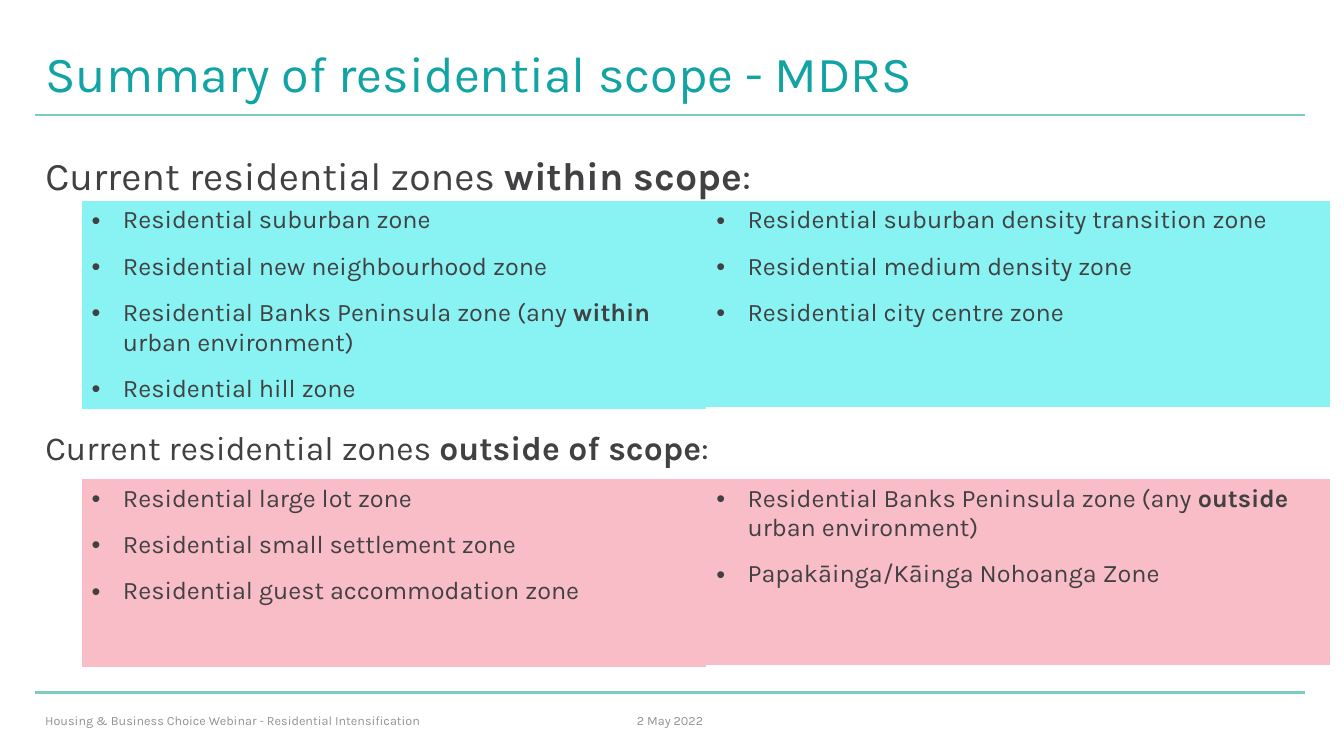
from dataclasses import dataclass

from lxml.etree import SubElement
from pptx import Presentation
from pptx.dml.color import RGBColor
from pptx.enum.shapes import MSO_CONNECTOR as Connector
from pptx.enum.text import MSO_ANCHOR as Anchor, MSO_AUTO_SIZE as AutoSize, PP_ALIGN as Align
from pptx.oxml.ns import qn
from pptx.util import Inches, Pt

FONT = "Karla"
COLORS = {
    "title": "12A4A4",
    "text": "414042",
    "footer": "939393",
    "rule": "7CCCBF",
    "within": "89F2F2",
    "outside": "F9BDC7",
    "border": "FFFFFF",
}
ZONE_INDENT = Inches(0.31)
RIGHT_CELL_BORDERS = {"R": 1, "T": 1, "B": 3}


@dataclass
class ZoneTable:
    top: float
    height: float
    fill: str
    columns: list[list[str]]


@dataclass
class FooterText:
    text: str
    left: float
    width: float
    align: Align


ZONE_TABLES = [
    ZoneTable(1.99, 2.07, "within", [
        [
            "Residential suburban zone",
            "Residential new neighbourhood zone",
            "Residential Banks Peninsula zone (any **within** urban environment)",
            "Residential hill zone",
        ],
        [
            "Residential suburban density transition zone",
            "Residential medium density zone",
            "Residential city centre zone",
        ],
    ]),
    ZoneTable(4.75, 1.87, "outside", [
        [
            "Residential large lot zone",
            "Residential small settlement zone",
            "Residential guest accommodation zone",
        ],
        [
            "Residential Banks Peninsula zone (any **outside** urban environment)",
            "Papakāinga/Kāinga Nohoanga Zone",
        ],
    ]),
]
FOOTER_TEXTS = [
    FooterText("Housing & Business Choice Webinar - Residential Intensification",
               0.35, 5.03, Align.LEFT),
    FooterText("2 May 2022", 6.07, 1.15, Align.CENTER),
]


def rgb(name: str) -> RGBColor:
    return RGBColor.from_string(COLORS[name])


def write(paragraph, text: str, *, size: float, color: str = "text",
          align: Align = Align.LEFT, line: float = 1.0,
          before: float = 0, after: float = 0) -> None:
    """Fill a paragraph; text between double asterisks is bold."""
    paragraph.alignment = align
    paragraph.line_spacing = line
    paragraph.space_before, paragraph.space_after = Pt(before), Pt(after)
    for index, part in enumerate(text.split("**")):
        run = paragraph.add_run()
        run.text = part
        run.font.name, run.font.size = FONT, Pt(size)
        run.font.bold = index % 2 == 1
        run.font.color.rgb = rgb(color)


def set_bullet(paragraph, char: str = "") -> None:
    """Give a hanging bullet, or none when char is empty."""
    props = paragraph._p.get_or_add_pPr()
    indent = ZONE_INDENT if char else 0
    props.set("marL", str(indent))
    props.set("indent", str(-indent))
    if char:
        SubElement(props, qn("a:buFont"), typeface="Arial")
        SubElement(props, qn("a:buChar"), char=char)
    else:
        SubElement(props, qn("a:buNone"))


def place(shape, left: float, top: float, width: float, height: float) -> None:
    shape.left, shape.top = Inches(left), Inches(top)
    shape.width, shape.height = Inches(width), Inches(height)


def add_rule(slide, y: float) -> None:
    rule = slide.shapes.add_connector(
        Connector.STRAIGHT, Inches(0.35), Inches(y), Inches(12.94), Inches(y))
    rule.line.color.rgb = rgb("rule")
    rule.line.width = Pt(1.5)
    SubElement(rule._element.spPr, qn("a:effectLst"))


def set_borders(cell, widths: dict[str, float]) -> None:
    """Draw the listed sides in the border colour and hide the others."""
    props = cell._tc.get_or_add_tcPr()
    for side in "LRTB":
        width = widths.get(side, 0)
        edge = SubElement(props, qn(f"a:ln{side}"), w=str(Pt(width)))
        if width:
            fill = SubElement(edge, qn("a:solidFill"))
            SubElement(fill, qn("a:srgbClr"), val=COLORS["border"])
        else:
            SubElement(edge, qn("a:noFill"))


def add_zone_table(slide, zones: ZoneTable) -> None:
    table = slide.shapes.add_table(
        1, len(zones.columns), Inches(0.81), Inches(zones.top),
        Inches(12.39), Inches(zones.height)).table
    table.first_row = table.horz_banding = False
    for column, names in enumerate(zones.columns):
        cell = table.cell(0, column)
        set_borders(cell, RIGHT_CELL_BORDERS if column else {})
        cell.fill.solid()
        cell.fill.fore_color.rgb = rgb(zones.fill)
        frame = cell.text_frame
        for index, name in enumerate(names):
            paragraph = frame.add_paragraph() if index else frame.paragraphs[0]
            set_bullet(paragraph, "•")
            write(paragraph, name, size=18, before=6 if index else 0, after=6)


def add_footer(slide, footer: FooterText) -> None:
    box = slide.shapes.add_textbox(
        Inches(footer.left), Inches(6.95), Inches(footer.width), Inches(0.4))
    box.text_frame.word_wrap = True
    box.text_frame.vertical_anchor = Anchor.MIDDLE
    write(box.text_frame.paragraphs[0], footer.text, size=9, color="footer",
          align=footer.align)


def main() -> None:
    deck = Presentation()
    deck.slide_width, deck.slide_height = Inches(13.33), Inches(7.5)
    slide = deck.slides.add_slide(deck.slide_layouts[1])

    for y in (1.14, 6.87):
        add_rule(slide, y)

    title = slide.shapes.title
    place(title, 0.35, 0.4, 12.6, 0.72)
    title.text_frame.vertical_anchor = Anchor.MIDDLE
    title.text_frame.auto_size = AutoSize.NONE
    write(title.text_frame.paragraphs[0], "Summary of residential scope - MDRS",
          size=36, color="title", line=0.9)

    headings = slide.placeholders[1]
    place(headings, 0.35, 1.5, 12.6, 5.31)
    frame = headings.text_frame
    frame.auto_size = AutoSize.NONE
    within, outside = frame.paragraphs[0], frame.add_paragraph()
    for heading in (within, outside):
        set_bullet(heading)
    write(within, "Current residential zones **within scope**:", size=28, line=0.9)
    write(outside, "Current residential zones **outside of scope**:", size=24,
          line=0.9, before=166)

    for zones in ZONE_TABLES:
        add_zone_table(slide, zones)
    for footer in FOOTER_TEXTS:
        add_footer(slide, footer)

    deck.save("out.pptx")


if __name__ == "__main__":
    main()
